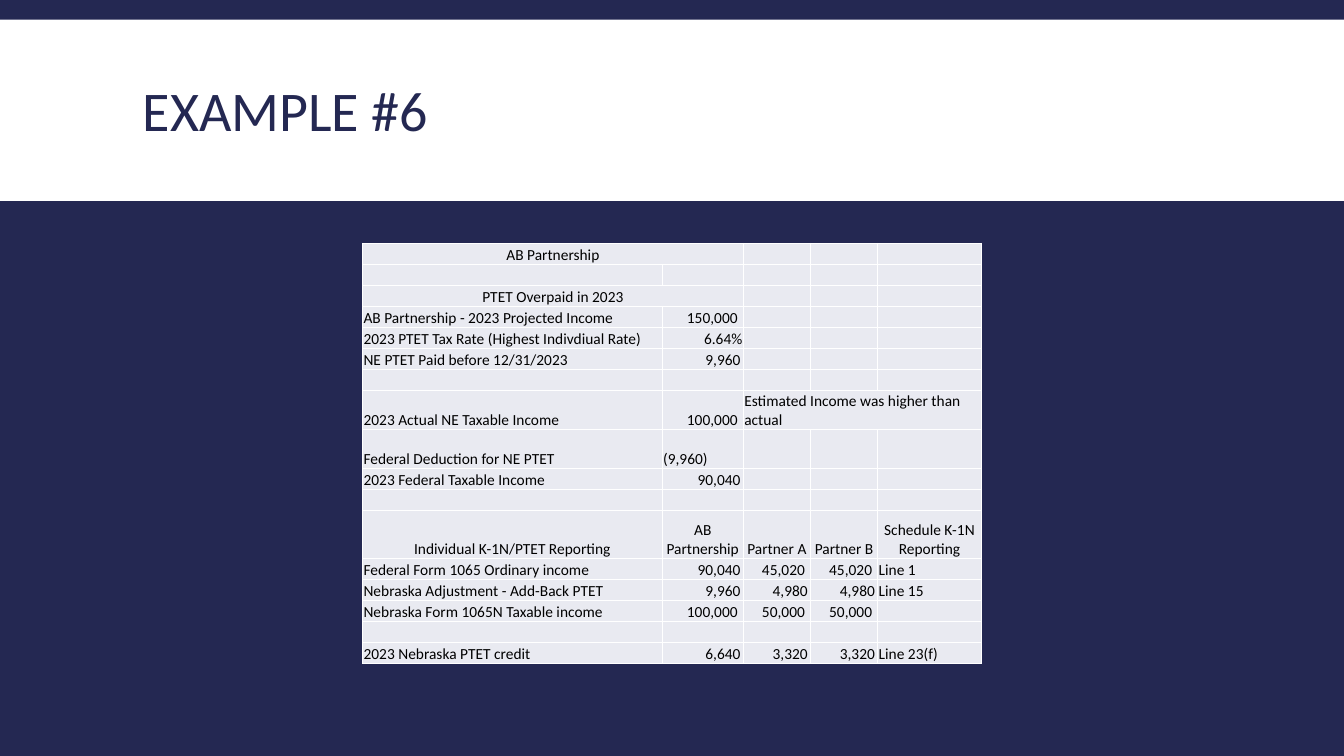
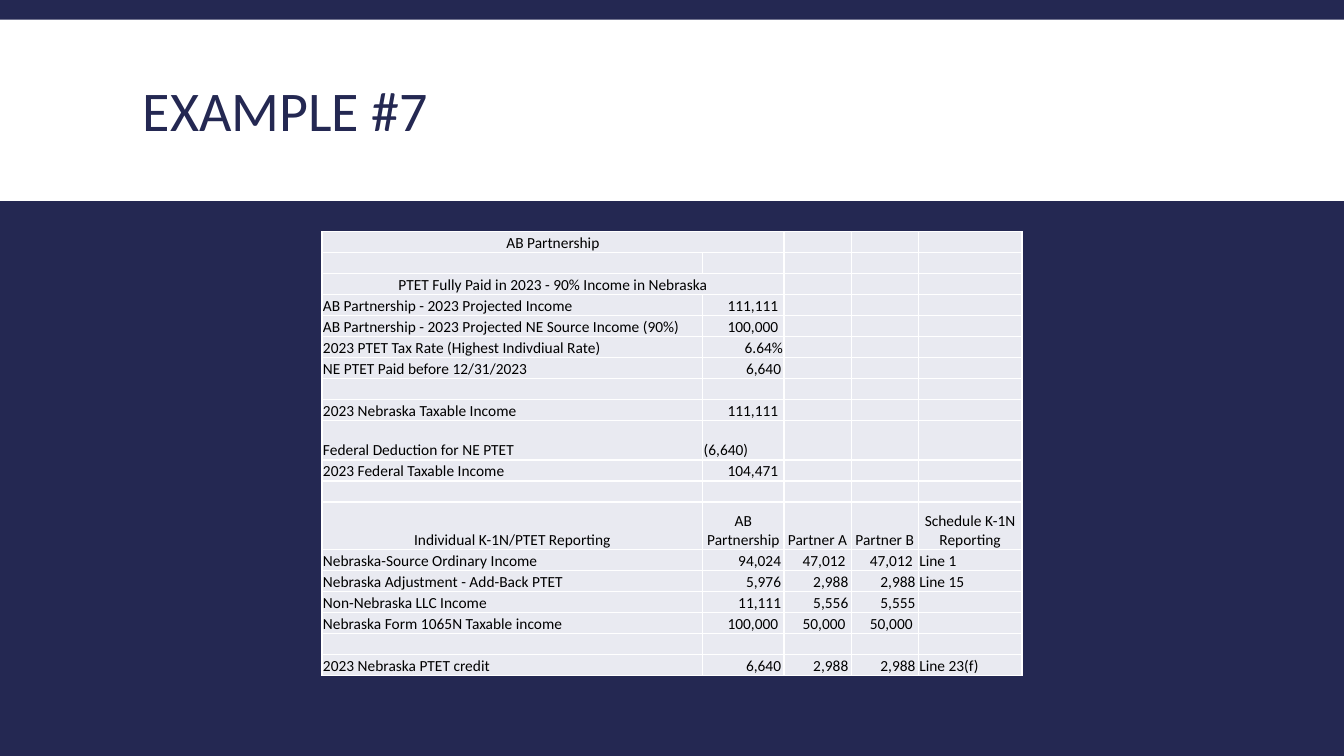
from dataclasses import dataclass
from typing import NamedTuple

from lxml.etree import SubElement
from pptx import Presentation
from pptx.dml.color import RGBColor
from pptx.enum.shapes import MSO_SHAPE
from pptx.enum.text import MSO_ANCHOR, PP_ALIGN
from pptx.oxml.ns import qn
from pptx.presentation import Presentation as Deck
from pptx.slide import Slide
from pptx.table import Table, _Cell
from pptx.text.text import TextFrame
from pptx.util import Pt


@dataclass(frozen=True)
class Theme:
    navy: str = "242852"
    white: str = "FFFFFF"
    black: str = "000000"
    cell: str = "E9EAF1"
    font: str = "Calibri"
    title_size: float = 40
    table_size: float = 11


THEME = Theme()
SLIDE_WIDTH, SLIDE_HEIGHT = 960, 540
AMOUNT_WIDTHS = (58, 48, 48, 74)
ROW_HEIGHT, DEDUCTION_HEIGHT, HEADING_HEIGHT = 15, 28, 34
CELL_INSET = 0.7
WIDEST_AMOUNT = {1: 7, 2: 6, 3: 6}


class Line(NamedTuple):
    label: str = ""
    partnership: str = ""
    partner_a: str = ""
    partner_b: str = ""
    schedule: str = ""
    height: float = ROW_HEIGHT
    centered: bool = False
    label_span: int = 1
    note: str = ""


class Example(NamedTuple):
    title: str
    label_width: float
    top: float
    lines: list[Line]


def caption(text: str) -> Line:
    return Line(text, centered=True, label_span=2)


def deduction(amount: str) -> Line:
    return Line("Federal Deduction for NE PTET", amount, height=DEDUCTION_HEIGHT)


GAP = Line()
OWNER = caption("AB Partnership")
TAX_RATE = Line("2023 PTET Tax Rate (Highest Indivdiual Rate)", "6.64%")
HEADING = Line("Individual K-1N/PTET Reporting", "AB Partnership", "Partner A",
               "Partner B", "Schedule K-1N Reporting",
               height=HEADING_HEIGHT, centered=True)
NEBRASKA_TOTAL = Line("Nebraska Form 1065N Taxable income", "100,000", "50,000", "50,000")

EXAMPLES = [
    Example("EXAMPLE #6", 214, 174, [
        OWNER,
        GAP,
        caption("PTET Overpaid in 2023"),
        Line("AB Partnership - 2023 Projected Income", "150,000"),
        TAX_RATE,
        Line("NE PTET Paid before 12/31/2023", "9,960"),
        GAP,
        Line("2023 Actual NE Taxable Income", "100,000", height=DEDUCTION_HEIGHT,
             note="Estimated Income was higher than actual"),
        deduction("(9,960)"),
        Line("2023 Federal Taxable Income", "90,040"),
        GAP,
        HEADING,
        Line("Federal Form 1065 Ordinary income", "90,040", "45,020", "45,020", "Line 1"),
        Line("Nebraska Adjustment - Add-Back PTET", "9,960", "4,980", "4,980", "Line 15"),
        NEBRASKA_TOTAL,
        GAP,
        Line("2023 Nebraska PTET credit", "6,640", "3,320", "3,320", "Line 23(f)"),
    ]),
    Example("EXAMPLE #7", 272, 165.6, [
        OWNER,
        GAP,
        caption("PTET Fully Paid in 2023 - 90% Income in Nebraska"),
        Line("AB Partnership - 2023 Projected Income", "111,111"),
        Line("AB Partnership - 2023 Projected NE Source Income (90%)", "100,000"),
        TAX_RATE,
        Line("NE PTET Paid before 12/31/2023", "6,640"),
        GAP,
        Line("2023 Nebraska Taxable Income", "111,111"),
        deduction("(6,640)"),
        Line("2023 Federal Taxable Income", "104,471"),
        GAP,
        HEADING,
        Line("Nebraska-Source Ordinary Income", "94,024", "47,012", "47,012", "Line 1"),
        Line("Nebraska Adjustment - Add-Back PTET", "5,976", "2,988", "2,988", "Line 15"),
        Line("Non-Nebraska LLC Income", "11,111", "5,556", "5,555"),
        NEBRASKA_TOTAL,
        GAP,
        Line("2023 Nebraska PTET credit", "6,640", "2,988", "2,988", "Line 23(f)"),
    ]),
]


def write(frame: TextFrame, text: str, *, size: float, color: str,
          align: PP_ALIGN = PP_ALIGN.LEFT, line_spacing: float = 1.0) -> None:
    paragraph = frame.paragraphs[0]
    paragraph.alignment = align
    paragraph.line_spacing = line_spacing
    if not text:
        # Keeps an empty row as low as a row with text
        SubElement(paragraph._p, qn("a:endParaRPr"), sz=str(int(size * 100)))
        return
    run = paragraph.add_run()
    run.text = text
    run.font.name = THEME.font
    run.font.size = Pt(size)
    run.font.color.rgb = RGBColor.from_string(color)


def add_title_band(slide: Slide, title: str) -> None:
    band = slide.shapes.add_shape(MSO_SHAPE.RECTANGLE, Pt(0), Pt(14),
                                  Pt(SLIDE_WIDTH), Pt(129.6))
    band.shadow.inherit = False
    band.fill.solid()
    band.fill.fore_color.rgb = RGBColor.from_string(THEME.white)
    band.line.fill.background()

    heading = slide.shapes.add_textbox(Pt(95), Pt(22.3), Pt(770.4), Pt(118.8)).text_frame
    heading.word_wrap = True
    heading.vertical_anchor = MSO_ANCHOR.MIDDLE
    write(heading, title, size=THEME.title_size, color=THEME.navy, line_spacing=0.85)


def style_cell(cell: _Cell) -> None:
    cell.vertical_anchor = MSO_ANCHOR.BOTTOM
    cell.margin_left = cell.margin_right = cell.margin_top = Pt(CELL_INSET)
    cell.margin_bottom = Pt(0)
    properties = cell._tc.get_or_add_tcPr()
    for side in ("L", "R", "T", "B"):
        border = SubElement(properties, qn(f"a:ln{side}"), w=str(Pt(1)))
        SubElement(SubElement(border, qn("a:solidFill")), qn("a:srgbClr"), val=THEME.white)
    cell.fill.solid()
    cell.fill.fore_color.rgb = RGBColor.from_string(THEME.cell)


def fill_row(table: Table, row: int, line: Line) -> None:
    table.rows[row].height = Pt(line.height)
    texts = (line.label, line.partnership, line.note or line.partner_a,
             line.partner_b, line.schedule)
    for column, text in enumerate(texts):
        cell = table.cell(row, column)
        style_cell(cell)
        align = PP_ALIGN.LEFT
        if line.centered:
            align = PP_ALIGN.CENTER
        elif column in WIDEST_AMOUNT and text[:1].isdigit():
            align = PP_ALIGN.RIGHT
            if not text.endswith("%"):
                cell.margin_right = Pt(4 if len(text) == WIDEST_AMOUNT[column] else 2)
        write(cell.text_frame, text, size=THEME.table_size, color=THEME.black, align=align)
    if line.label_span > 1:
        table.cell(row, 0).merge(table.cell(row, line.label_span - 1))
    if line.note:
        table.cell(row, 2).merge(table.cell(row, 4))


def add_tax_table(slide: Slide, example: Example) -> None:
    widths = (example.label_width, *AMOUNT_WIDTHS)
    total = sum(widths)
    table = slide.shapes.add_table(
        len(example.lines), len(widths), Pt((SLIDE_WIDTH - total) / 2), Pt(example.top),
        Pt(total), Pt(sum(line.height for line in example.lines))).table
    table.first_row = table.horz_banding = False
    for column, width in zip(table.columns, widths):
        column.width = Pt(width)
    for row, line in enumerate(example.lines):
        fill_row(table, row, line)


def add_example(deck: Deck, example: Example) -> None:
    slide = deck.slides.add_slide(deck.slide_layouts[6])
    slide.background.fill.solid()
    slide.background.fill.fore_color.rgb = RGBColor.from_string(THEME.navy)
    add_title_band(slide, example.title)
    add_tax_table(slide, example)


def main() -> None:
    deck = Presentation()
    deck.slide_width, deck.slide_height = Pt(SLIDE_WIDTH), Pt(SLIDE_HEIGHT)
    for example in EXAMPLES:
        add_example(deck, example)
    deck.save("out.pptx")


if __name__ == "__main__":
    main()
